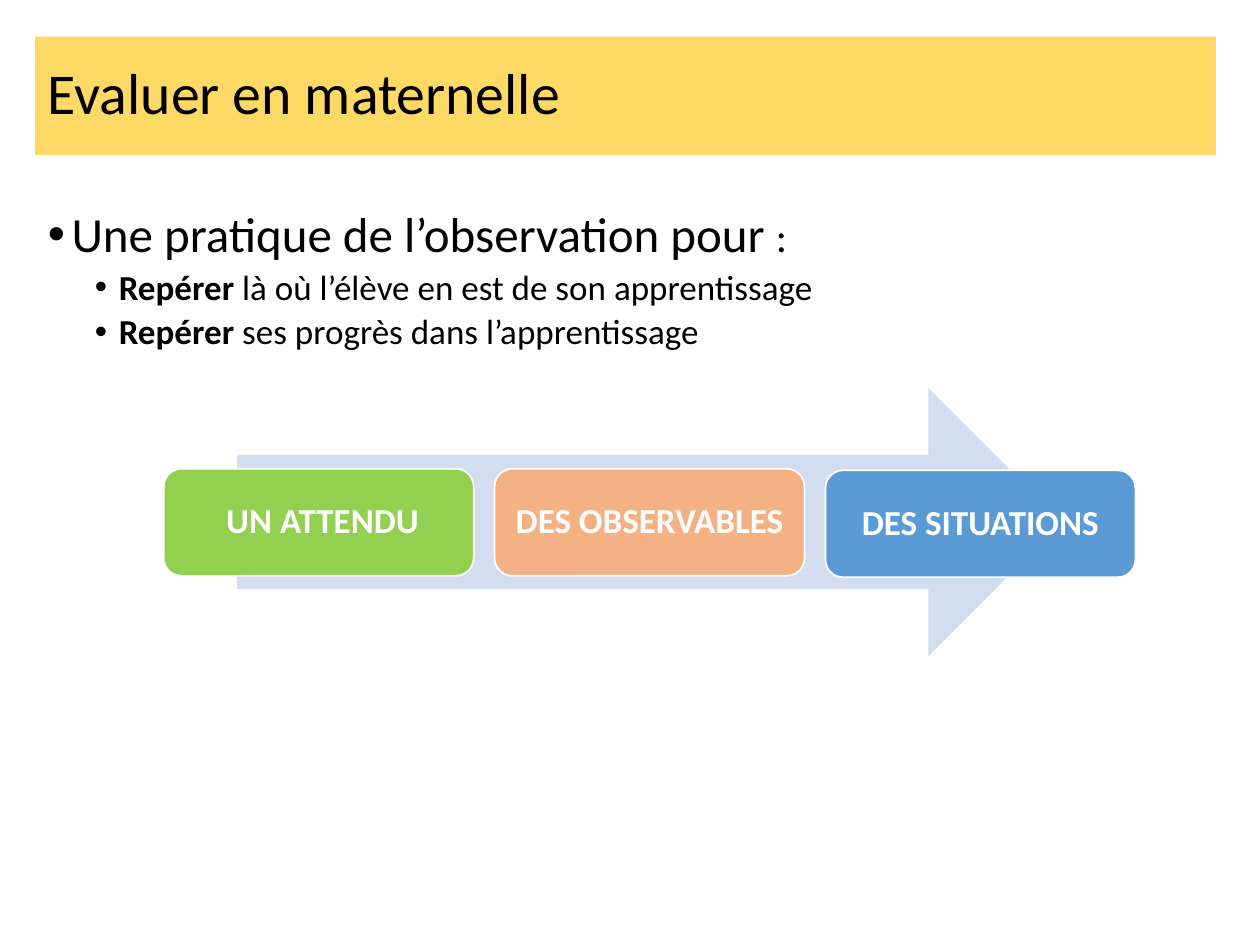
"""Build the slide on assessment in nursery school."""

from dataclasses import dataclass

import lxml.etree
import pptx
import pptx.dml.color
import pptx.enum.shapes
import pptx.enum.text
import pptx.oxml.ns
import pptx.util
from pptx.util import Cm, Pt

RGBColor = pptx.dml.color.RGBColor
BLACK = RGBColor(0x00, 0x00, 0x00)
WHITE = RGBColor(0xFF, 0xFF, 0xFF)
YELLOW = RGBColor(0xFF, 0xD9, 0x66)
PALE_BLUE = RGBColor(0xD2, 0xDE, 0xEF)
GREEN = RGBColor(0x92, 0xD0, 0x50)
ORANGE = RGBColor(0xF4, 0xB1, 0x83)
BLUE = RGBColor(0x5B, 0x9B, 0xD5)

FONT = "Calibri"
LINE_SPACING = 0.9
STEP_LEFT, STEP_PITCH = 3.3, 6.67
STEP_WIDTH, STEP_HEIGHT = 6.25, 2.16


@dataclass(frozen=True)
class Step:
    label: str
    color: RGBColor
    top: float = 9.45


@dataclass(frozen=True)
class Observation:
    verb: str
    goal: str


STEPS = (
    Step(" UN ATTENDU", GREEN),
    Step("DES OBSERVABLES", ORANGE),
    Step("DES SITUATIONS", BLUE, top=9.48),
)
OBSERVATIONS = (
    Observation("Repérer", " là où l’élève en est de son apprentissage"),
    Observation("Repérer ", "ses progrès dans l’apprentissage"),
)


def place(shape, left: float, top: float, width: float, height: float) -> None:
    """Move and size a shape, in centimetres."""
    shape.left, shape.top = Cm(left), Cm(top)
    shape.width, shape.height = Cm(width), Cm(height)


def style_font(font, size: float, color: RGBColor) -> None:
    """Apply the slide's typeface with a size and colour."""
    font.name = FONT
    font.size = Pt(size)
    font.color.rgb = color


def format_bullet(paragraph, level: int, margin: float, space_before: float) -> None:
    """Give a paragraph its level, spacing and round bullet."""
    paragraph.level = level
    paragraph.line_spacing = LINE_SPACING
    paragraph.space_before = Pt(space_before)
    properties = paragraph._p.get_or_add_pPr()
    properties.set("marL", str(Cm(margin)))
    properties.set("indent", str(Cm(-0.48)))
    qn = pptx.oxml.ns.qn
    lxml.etree.SubElement(properties, qn("a:buFont"), typeface="Arial")
    lxml.etree.SubElement(properties, qn("a:buChar"), char="•")


def fill_title(title) -> None:
    """Write the title on its yellow band."""
    place(title, 0.71, 0.74, 23.8, 2.39)
    title.fill.solid()
    title.fill.fore_color.rgb = YELLOW
    frame = title.text_frame
    frame.text = "Evaluer en maternelle"
    frame.auto_size = pptx.enum.text.MSO_AUTO_SIZE.NONE
    frame.vertical_anchor = pptx.enum.text.MSO_ANCHOR.MIDDLE
    heading = frame.paragraphs[0]
    heading.alignment = pptx.enum.text.PP_ALIGN.LEFT
    heading.line_spacing = LINE_SPACING
    style_font(heading.font, 33, BLACK)


def fill_body(body) -> None:
    """Write the practice and its observations as a bulleted list."""
    place(body, 0.71, 4.11, 23.5, 12.8)
    frame = body.text_frame
    frame.auto_size = pptx.enum.text.MSO_AUTO_SIZE.NONE
    practice = frame.paragraphs[0]
    practice.alignment = pptx.enum.text.PP_ALIGN.JUSTIFY
    format_bullet(practice, level=0, margin=0.48, space_before=7.5)
    style_font(practice.font, 28, BLACK)
    practice.add_run().text = "Une pratique de l’observation pour "
    colon = practice.add_run()
    colon.text = ":"
    colon.font.size = Pt(24)
    for observation in OBSERVATIONS:
        item = frame.add_paragraph()
        format_bullet(item, level=1, margin=1.43, space_before=3.8)
        style_font(item.font, 20, BLACK)
        verb = item.add_run()
        verb.text = observation.verb
        verb.font.bold = True
        item.add_run().text = observation.goal


def add_arrow(shapes) -> None:
    """Draw the arrow running behind the steps."""
    arrow = shapes.add_shape(
        pptx.enum.shapes.MSO_SHAPE.RIGHT_ARROW,
        Cm(4.78), Cm(7.82), Cm(16.64), Cm(5.41),
    )
    arrow.shadow.inherit = False
    arrow.fill.solid()
    arrow.fill.fore_color.rgb = PALE_BLUE
    arrow.line.fill.background()


def add_step(shapes, index: int, step: Step) -> None:
    """Draw one labelled step of the process."""
    box = shapes.add_shape(
        pptx.enum.shapes.MSO_SHAPE.ROUNDED_RECTANGLE,
        Cm(STEP_LEFT + index * STEP_PITCH), Cm(step.top),
        Cm(STEP_WIDTH), Cm(STEP_HEIGHT),
    )
    box.shadow.inherit = False
    box.fill.solid()
    box.fill.fore_color.rgb = step.color
    box.line.color.rgb = WHITE
    box.line.width = Pt(1)
    frame = box.text_frame
    frame.word_wrap = True
    frame.margin_left = frame.margin_right = Cm(0.2)
    frame.vertical_anchor = pptx.enum.text.MSO_ANCHOR.MIDDLE
    frame.text = step.label
    label = frame.paragraphs[0]
    label.alignment = pptx.enum.text.PP_ALIGN.CENTER
    label.line_spacing = LINE_SPACING
    style_font(label.font, 20, WHITE)
    label.font.bold = True


def main() -> None:
    """Build and save the presentation."""
    presentation = pptx.Presentation()
    presentation.slide_width, presentation.slide_height = Cm(25.4), Cm(19.05)
    slide = presentation.slides.add_slide(presentation.slide_layouts[1])
    fill_title(slide.shapes.title)
    fill_body(slide.placeholders[1])
    add_arrow(slide.shapes)
    for index, step in enumerate(STEPS):
        add_step(slide.shapes, index, step)
    presentation.save("out.pptx")


if __name__ == "__main__":
    main()
